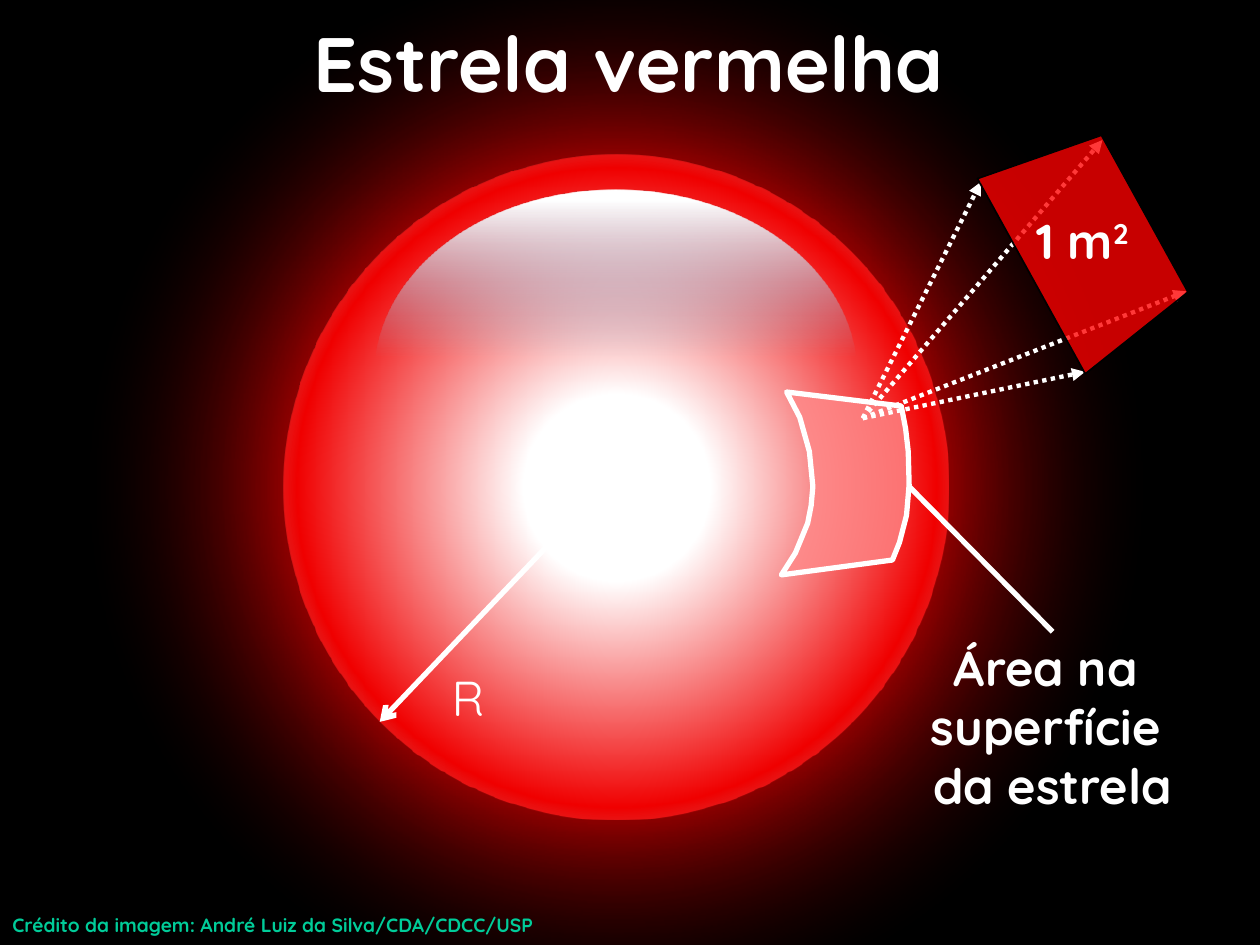
from lxml import etree
from pptx import Presentation
from pptx.dml.color import RGBColor
from pptx.enum.dml import MSO_LINE
from pptx.enum.shapes import MSO_CONNECTOR, MSO_SHAPE
from pptx.enum.text import MSO_ANCHOR, PP_ALIGN
from pptx.oxml import parse_xml
from pptx.oxml.ns import qn
from pptx.util import Pt

OVAL, TRAPEZOID = MSO_SHAPE.OVAL, MSO_SHAPE.TRAPEZOID
STRAIGHT = MSO_CONNECTOR.STRAIGHT
DOTTED = MSO_LINE.ROUND_DOT
LEFT, CENTER = PP_ALIGN.LEFT, PP_ALIGN.CENTER
TOP, MIDDLE = MSO_ANCHOR.TOP, MSO_ANCHOR.MIDDLE
FONT = "Quicksand"
WHITE, BLACK, RED, PINK, GREEN = "FFFFFF", "000000", "FF0000", "FF8989", "00CC99"
DRAWING = "http://schemas.openxmlformats.org/drawingml/2006/main"


def color(value):
    return RGBColor.from_string(value)


def points(*values):
    return [Pt(value) for value in values]


def fill_solid(shape, value, opacity):
    shape.fill.solid()
    shape.fill.fore_color.rgb = color(value)
    tint = shape.fill._xPr.find(".//" + qn("a:srgbClr"))
    etree.SubElement(tint, qn("a:alpha"), val=str(opacity * 1000))


def fill_gradient(shape, stops, direction):
    marks = "".join(
        f'<a:gs pos="{place * 1000}"><a:srgbClr val="{value}">'
        f'<a:alpha val="{opacity * 1000}"/></a:srgbClr></a:gs>'
        for place, value, opacity in stops)
    gradient = parse_xml(f'<a:gradFill xmlns:a="{DRAWING}" rotWithShape="1">'
                         f"<a:gsLst>{marks}</a:gsLst>{direction}</a:gradFill>")
    shape._element.spPr.find(qn("a:prstGeom")).addnext(gradient)


def add_glow(page, box, stops, direction):
    oval = page.shapes.add_shape(OVAL, *points(*box))
    oval.shadow.inherit = False
    oval.line.fill.background()
    fill_gradient(oval, stops, direction)


def add_line(page, start, end, width=3, head=None, dash=None):
    line = page.shapes.add_connector(STRAIGHT, *points(*start, *end))
    line.line.color.rgb = color(WHITE)
    line.line.width = Pt(width)
    if dash:
        line.line.dash_style = dash
    if head:
        etree.SubElement(line.line._get_or_add_ln(), qn("a:tailEnd"), type=head)
    etree.SubElement(line._element.spPr, qn("a:effectLst"))


def add_text(page, box, lines, size, value=WHITE, bold=True, align=CENTER, anchor=TOP):
    """Each line is a list of (text, baseline in percent) pairs."""
    frame = page.shapes.add_textbox(*points(*box)).text_frame
    frame.word_wrap = True
    frame.vertical_anchor = anchor
    look = {"name": FONT, "size": Pt(size), "bold": bold}
    for index, line in enumerate(lines):
        para = frame.add_paragraph() if index else frame.paragraphs[0]
        para.alignment = align
        for text, baseline in line:
            span = para.add_run()
            span.text = text
            for key, setting in look.items():
                setattr(span.font, key, setting)
            span.font.color.rgb = color(value)
            if baseline:
                span._r.get_or_add_rPr().set("baseline", str(baseline * 1000))


def draw_star(page, left, top, size):
    radial = ('<a:path path="circle"><a:fillToRect l="50000" t="50000" '
              'r="50000" b="50000"/></a:path>')
    vertical = '<a:lin ang="5400000" scaled="0"/>'
    # Halo
    add_glow(page, (left, top, size, size),
             [(34, WHITE, 0), (39, "C20000", 72), (64, BLACK, 0)], radial)
    # Disc, centred in the halo
    disc = 380
    inset = (size - disc) / 2
    add_glow(page, (left + inset, top + inset, disc, disc),
             [(20, WHITE, 100), (68, "F00000", 100), (99, WHITE, 0)], radial)
    # Reflection
    add_glow(page, (left + 207.5, top + 175.5, 275.5, 210.5),
             [(3, WHITE, 100), (45, "69D8FF", 0), (91, BLACK, 0)], vertical)
    # Radius
    add_text(page, (left + 235, top + 445, 52, 41), [[("R", 0)]], 28, bold=False)
    add_line(page, (left + 341.5, top + 342), (left + 210.5, top + 479.5), head="arrow")


def draw_patch(page, left, top):
    right_edge = [(68.5, 8), (71, 21), (72.5, 34), (73, 53),
                  (71.5, 70.5), (67.5, 86), (63.5, 96)]
    left_edge = [(0, 104.5), (8, 92), (15, 75), (17, 65), (18, 54),
                 (16, 34), (10.5, 14.5), (3, 0)]
    outline = [(left + x, top + y) for x, y in right_edge + left_edge]
    builder = page.shapes.build_freeform(*points(*outline[0]))
    builder.add_line_segments([points(*spot) for spot in outline[1:]], close=True)
    patch = builder.convert_to_shape()
    patch.shadow.inherit = False
    fill_solid(patch, PINK, 78)
    patch.line.color.rgb = color(WHITE)
    patch.line.width = Pt(3)
    etree.SubElement(patch.line._get_or_add_ln(), qn("a:round"))


def draw_patch_label(page, left, top, width, height):
    lines = ["Área na ", "superfície ", "da estrela"]
    add_text(page, (left, top, width, height), [[(line, 0)] for line in lines], 28)
    add_line(page, (left + width / 2, top), (left + 17, top - 83.5))


def draw_square_metre(page, left, top):
    # Rays from the patch to the four corners
    source = (left, top + 159)
    for x, y in [(137, 0), (185, 86.5), (127, 132.5), (67.5, 24)]:
        add_line(page, source, (left + x, top + y), 2.5, "triangle", DOTTED)
    # Projected area
    area = page.shapes.add_shape(TRAPEZOID, *points(left + 65, top + 23, 127.5, 74))
    area.shadow.inherit = False
    area.adjustments[0] = 0.17
    area.rotation = 61.1
    fill_solid(area, RED, 78)
    area.line.color.rgb = color(BLACK)
    area.line.width = Pt(1)
    add_text(page, (left + 82, top + 36.5, 87, 41), [[("1 m", 0), ("2", 30)]], 28)


def main():
    deck = Presentation()
    deck.slide_width, deck.slide_height = points(720, 540)
    page = deck.slides.add_slide(deck.slide_layouts[6])
    page.background.fill.solid()
    page.background.fill.fore_color.rgb = color(BLACK)

    draw_star(page, 6.5, -67, 691)
    add_text(page, (16.5, 3.5, 686, 63), [[("Estrela vermelha", 0)]], 44, anchor=MIDDLE)
    draw_patch(page, 446.5, 224)
    add_text(page, (0, 518.5, 711, 21),
             [[("Crédito da imagem: André Luiz da Silva/CDA/CDCC/USP", 0)]],
             11, GREEN, align=LEFT)
    draw_patch_label(page, 502, 361, 199, 109)
    draw_square_metre(page, 493, 80)
    deck.save("out.pptx")


if __name__ == "__main__":
    main()
